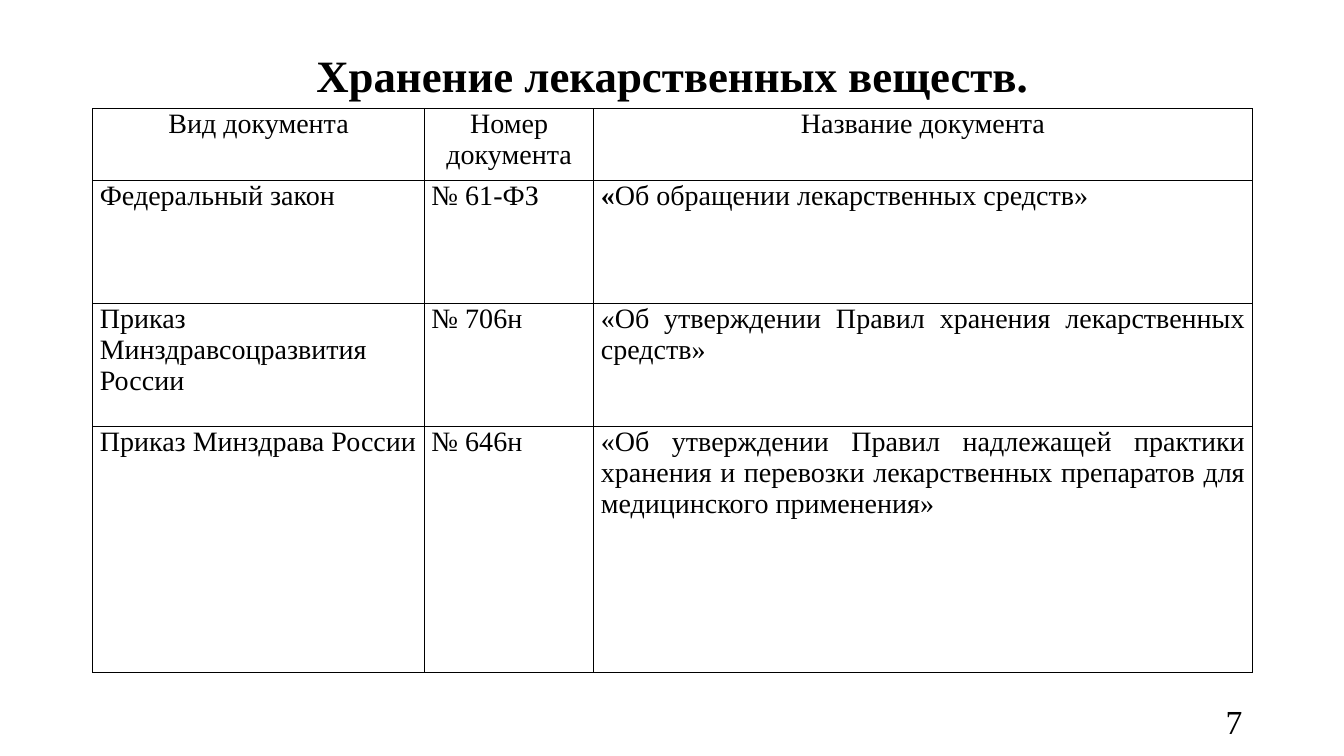
from dataclasses import dataclass

from lxml import etree
from pptx import Presentation
from pptx import util as u
from pptx.dml.color import RGBColor
from pptx.enum import text
from pptx.oxml import ns

BLACK = RGBColor(0x00, 0x00, 0x00)
WHITE = RGBColor(0xFF, 0xFF, 0xFF)
FONT = "Times New Roman"
LEFT, WIDTH = 0.92, 11.5
COLUMN_WIDTHS = (3.29, 1.68, 6.53)


@dataclass(frozen=True)
class DocumentRow:
    kind: str
    number: str
    name: str
    height: float
    align: text.PP_ALIGN = text.PP_ALIGN.JUSTIFY


DOCUMENTS = (
    DocumentRow("Вид документа", "Номер документа", "Название документа",
                0.71, text.PP_ALIGN.CENTER),
    DocumentRow("Федеральный закон", "№ 61-ФЗ",
                "«Об обращении лекарственных средств»", 1.22),
    DocumentRow("Приказ Минздравсоцразвития России", "№ 706н",
                "«Об утверждении Правил хранения лекарственных средств»", 1.22),
    DocumentRow("Приказ Минздрава России", "№ 646н",
                "«Об утверждении Правил надлежащей практики хранения и перевозки "
                "лекарственных препаратов для медицинского применения»", 2.44),
)


def format_paragraph(paragraph, size: int, align: text.PP_ALIGN, bold: bool = False) -> None:
    paragraph.alignment = align
    for run in paragraph.runs:
        run.font.name = FONT
        run.font.size = u.Pt(size)
        run.font.bold = bold
        run.font.color.rgb = BLACK


def fill_frame(frame, words: str, size: int, align: text.PP_ALIGN, bold: bool = False) -> None:
    frame.word_wrap = True
    frame.auto_size = text.MSO_AUTO_SIZE.NONE
    frame.vertical_anchor = text.MSO_ANCHOR.MIDDLE
    frame.text = words
    format_paragraph(frame.paragraphs[0], size, align, bold)


def add_borders(cell) -> None:
    properties = cell._tc.get_or_add_tcPr()
    for side in ("lnL", "lnR", "lnT", "lnB"):
        line = etree.SubElement(properties, ns.qn(f"a:{side}"), w=str(u.Pt(1)))
        solid = etree.SubElement(line, ns.qn("a:solidFill"))
        etree.SubElement(solid, ns.qn("a:srgbClr"), val=str(BLACK))


def fill_cell(cell, words: str, align: text.PP_ALIGN) -> None:
    cell.margin_left = cell.margin_right = u.Inches(0.07)
    cell.margin_top = cell.margin_bottom = u.Inches(0)
    add_borders(cell)
    cell.fill.solid()
    cell.fill.fore_color.rgb = WHITE
    cell.text_frame.text = words
    format_paragraph(cell.text_frame.paragraphs[0], 20, align)


def embolden_opening_quote(cell) -> None:
    paragraph = cell.text_frame.paragraphs[0]
    quote = paragraph.runs[0]
    rest = paragraph.add_run()
    quote.text, rest.text = quote.text[:1], quote.text[1:]
    format_paragraph(paragraph, 20, paragraph.alignment)
    quote.font.bold = True


def add_documents(slide) -> None:
    documents = slide.shapes.add_table(
        len(DOCUMENTS), len(COLUMN_WIDTHS), u.Inches(LEFT), u.Inches(1.08),
        u.Inches(WIDTH), u.Inches(sum(row.height for row in DOCUMENTS))).table
    documents.first_row = documents.horz_banding = False
    for column, width in zip(documents.columns, COLUMN_WIDTHS):
        column.width = u.Inches(width)
    for row, document in zip(documents.rows, DOCUMENTS):
        row.height = u.Inches(document.height)
        for cell, words in zip(row.cells, (document.kind, document.number, document.name)):
            fill_cell(cell, words, document.align)
    embolden_opening_quote(documents.cell(1, 2))


def main() -> None:
    presentation = Presentation()
    presentation.slide_width = u.Inches(13.33)
    presentation.slide_height = u.Inches(7.5)
    slide = presentation.slides.add_slide(presentation.slide_layouts[5])

    title = slide.shapes.title
    title.left, title.top = u.Inches(LEFT), u.Inches(0.4)
    title.width, title.height = u.Inches(WIDTH), u.Inches(0.68)
    fill_frame(title.text_frame, "Хранение лекарственных веществ.", 32,
               text.PP_ALIGN.CENTER, bold=True)

    add_documents(slide)

    page_number = slide.shapes.add_textbox(
        u.Inches(9.42), u.Inches(6.95), u.Inches(3), u.Inches(0.4))
    fill_frame(page_number.text_frame, "7", 24, text.PP_ALIGN.RIGHT)

    presentation.save("out.pptx")


if __name__ == "__main__":
    main()
